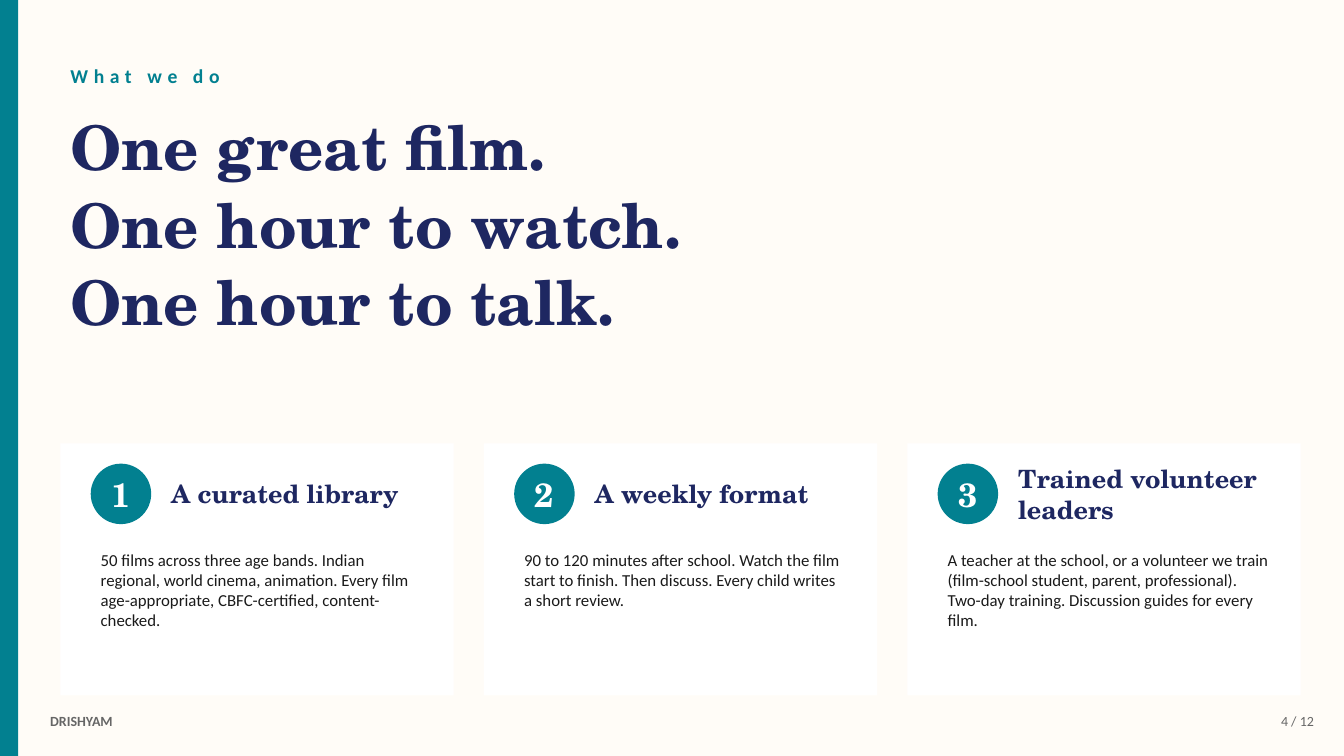
"""Build the "What we do" slide with three numbered cards."""
from pptx import Presentation
from pptx.dml.color import RGBColor
from pptx.enum.shapes import MSO_SHAPE as SHAPE
from pptx.enum.text import MSO_ANCHOR as ANCHOR, PP_ALIGN as ALIGN
from pptx.util import Inches, Pt

SERIF, SANS = "TeX Gyre Schola", "Calibri"
TEAL, NAVY, WHITE, GREY = "028090", "1E2761", "FFFFFF", "666666"


def add_text(text, x, y, w, h, size, color, font=SANS, bold=False, fill=None,
             align=ALIGN.LEFT, anchor=ANCHOR.MIDDLE, spacing=None, line=None):
    """Add text in a plain box, or in a filled circle when fill is given."""
    box = [Inches(v) for v in (x, y, w, h)]
    if fill:
        sp = add_block(SHAPE.OVAL, x, y, w, h, fill)
    else:
        sp = s.shapes.add_textbox(*box)
    tf = sp.text_frame
    tf.word_wrap = True
    tf.vertical_anchor = anchor
    if fill:
        tf.margin_left = tf.margin_right = tf.margin_top = tf.margin_bottom = 0
    for i, part in enumerate(text.split("\n")):
        p = tf.add_paragraph() if i else tf.paragraphs[0]
        p.alignment = align
        p.line_spacing = line
        r = p.add_run()
        r.text = part
        r.font.name, r.font.size, r.font.bold = font, Pt(size), bold
        r.font.color.rgb = RGBColor.from_string(color)
        if spacing:
            r.font._element.set("spc", str(spacing * 100))


def add_block(kind, x, y, w, h, fill):
    """Add a filled shape with no outline or shadow."""
    sp = s.shapes.add_shape(kind, *[Inches(v) for v in (x, y, w, h)])
    sp.shadow.inherit = False
    sp.fill.solid()
    sp.fill.fore_color.rgb = RGBColor.from_string(fill)
    sp.line.fill.background()
    return sp


prs = Presentation()
prs.slide_width, prs.slide_height = Inches(13.33), Inches(7.5)
s = prs.slides.add_slide(prs.slide_layouts[6])
s.background.fill.solid()
s.background.fill.fore_color.rgb = RGBColor.from_string("FFFCF7")

add_block(SHAPE.RECTANGLE, 0, 0, 0.18, 7.5, TEAL)
add_text("What we do", 0.6, 0.5, 6, 0.5, 14, TEAL, bold=True, spacing=4)
add_text("One great film.\nOne hour to watch.\nOne hour to talk.",
         0.6, 1, 12, 2.4, 44, NAVY, font=SERIF, bold=True, line=1.05)

cards = [
    ("A curated library",
     "50 films across three age bands. Indian regional, world cinema, animation. "
     "Every film age-appropriate, CBFC-certified, content-checked."),
    ("A weekly format",
     "90 to 120 minutes after school. Watch the film start to finish. "
     "Then discuss. Every child writes a short review."),
    ("Trained volunteer leaders",
     "A teacher at the school, or a volunteer we train (film-school student, "
     "parent, professional). Two-day training. Discussion guides for every film."),
]
for i, (heading, body) in enumerate(cards):
    x = 0.6 + 4.2 * i
    add_block(SHAPE.RECTANGLE, x, 4.4, 3.9, 2.5, WHITE)
    add_text(str(i + 1), x + 0.3, 4.6, 0.6, 0.6, 24, WHITE, font=SERIF,
             bold=True, fill=TEAL, align=ALIGN.CENTER)
    add_text(heading, x + 1, 4.6, 2.7, 0.6, 18, NAVY, font=SERIF, bold=True)
    add_text(body, x + 0.3, 5.4, 3.4, 1.5, 12, "1A1A1A", anchor=ANCHOR.TOP)

add_text("4 / 12", 12.13, 7, 1, 0.3, 10, GREY, align=ALIGN.RIGHT)
add_text("DRISHYAM", 0.4, 7, 2, 0.3, 10, GREY, bold=True)

prs.save("out.pptx")
